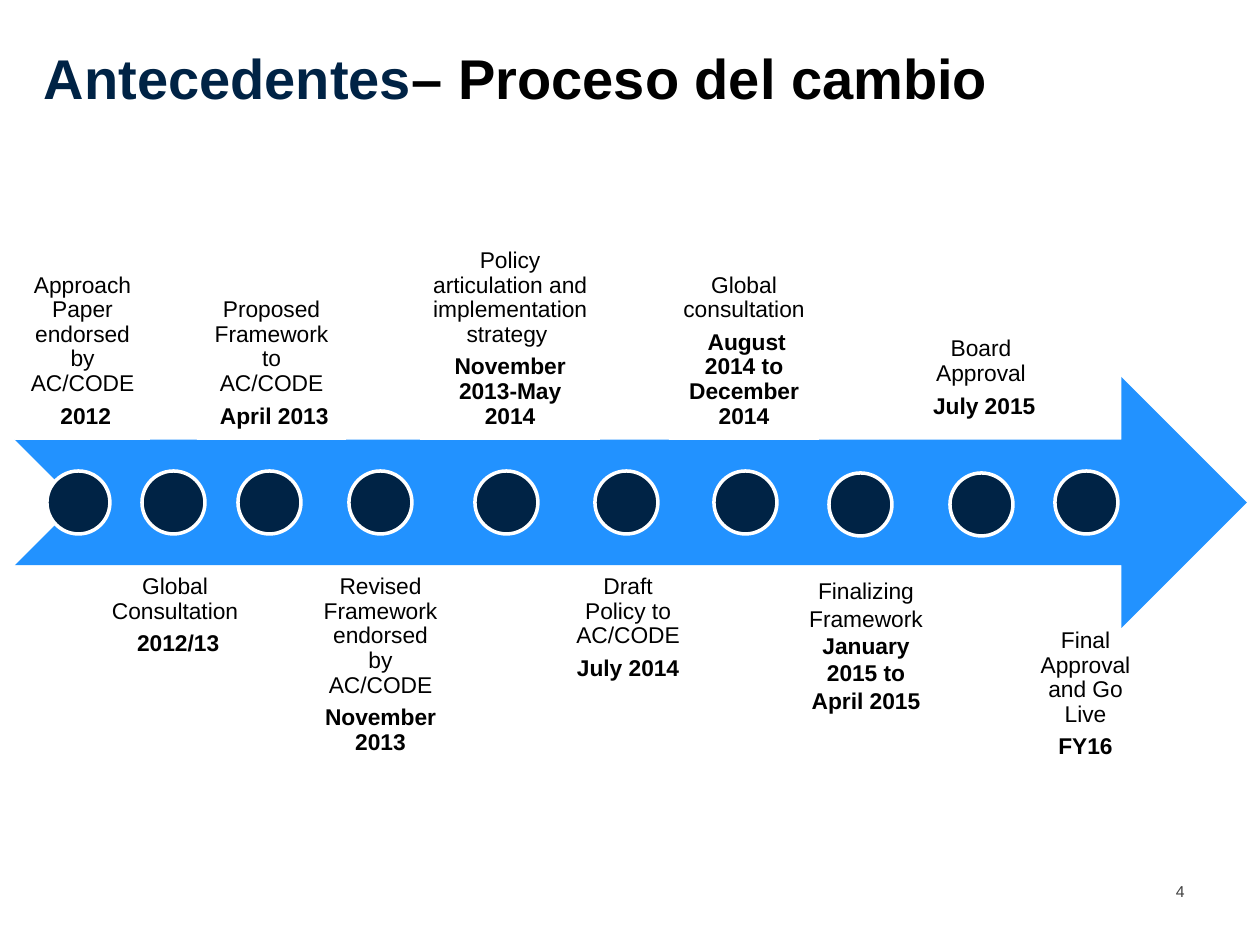
from pptx import Presentation
from pptx.dml.color import RGBColor
from pptx.enum.shapes import MSO_SHAPE as Shape
from pptx.enum.text import MSO_ANCHOR as Anchor, PP_ALIGN as Align
from pptx.util import Emu, Pt

PX_PER_INCH = 126
COLORS = {"navy": "002345", "blue": "2292FF", "white": "FFFFFF",
          "black": "000000", "gray": "404040"}
FONT = "Arial"
DOT_SIZE = 63
BOX_HEIGHT = 251
INSET = 11

# Milestone dots: left, top
DOTS = [(47, 471), (142, 471), (238, 471), (349, 471), (475, 471),
        (595, 471), (714, 471), (829, 473), (950, 473), (1055, 471)]

# Labels: left, top, width, step, date
UPPER_LABELS = [
    (15, 189, 135, "Approach Paper endorsed by AC/CODE", " 2012"),
    (197, 189, 149, "Proposed Framework to AC/CODE", " April 2013"),
    (420, 189, 180, "Policy articulation and implementation strategy ",
     "November 2013-May 2014"),
    (669, 189, 150, "Global consultation", " August 2014 to December 2014"),
    (906, 179, 150, "Board Approval", " July 2015"),
]
LOWER_LABELS = [
    (92, 564, 166, "Global Consultation", " 2012/13"),
    (310, 564, 141, "Revised Framework endorsed by AC/CODE", "November 2013"),
    (563, 564, 130, "Draft Policy to AC/CODE ", "July 2014"),
    (1024, 618, 123, "Final Approval and Go Live", "FY16"),
]


def px(length):
    return Emu(round(length * 914400 / PX_PER_INCH))


def rgb(name):
    return RGBColor.from_string(COLORS[name])


def style(font, size, color, bold=False):
    font.name = FONT
    font.size = Pt(size)
    font.bold = bold
    font.color.rgb = rgb(color)


def add_figure(slide, kind, left, top, width, height, fill, line=None):
    shape = slide.shapes.add_shape(kind, px(left), px(top), px(width), px(height))
    shape.shadow.inherit = False
    shape.fill.solid()
    shape.fill.fore_color.rgb = rgb(fill)
    if line:
        shape.line.color.rgb = rgb(line)
        shape.line.width = Pt(2)
    else:
        shape.line.fill.background()


def add_text_box(slide, left, top, width, height, insets, anchor=Anchor.TOP):
    box = slide.shapes.add_textbox(px(left), px(top), px(width), px(height))
    frame = box.text_frame
    frame.word_wrap = True
    frame.vertical_anchor = anchor
    (frame.margin_left, frame.margin_top,
     frame.margin_right, frame.margin_bottom) = map(px, insets)
    return box


def fill_label(frame, step, date, line_spacing, space_after):
    frame.text = f"{step}\n{date}"
    for paragraph, bold in zip(frame.paragraphs, (False, True)):
        paragraph.alignment = Align.CENTER
        paragraph.line_spacing = line_spacing
        paragraph.space_after = Pt(space_after)
        style(paragraph.runs[0].font, 13, "black", bold)


def add_label(slide, left, top, width, step, date, above):
    box = add_text_box(slide, left, top, width, BOX_HEIGHT, [INSET] * 4,
                       Anchor.BOTTOM if above else Anchor.TOP)
    if above:
        box.fill.solid()
        box.fill.fore_color.rgb = rgb("white")
    fill_label(box.text_frame, step, date, 0.9, 4.5)


def add_title(slide):
    box = add_text_box(slide, 44, 35, 1171, 79, (0, 0, 0, 3), Anchor.BOTTOM)
    paragraph = box.text_frame.paragraphs[0]
    for text, color in (("Antecedentes", "navy"),
                        ("– Proceso del cambio", "black")):
        run = paragraph.add_run()
        run.text = text
        style(run.font, 32, color, bold=True)


def add_page_number(slide):
    box = add_text_box(slide, 1176, 877, 39, 30, (0, 5, 0, 0))
    box.text_frame.text = "4"
    style(box.text_frame.paragraphs[0].runs[0].font, 9, "gray")


def main():
    presentation = Presentation()
    presentation.slide_width = px(1260)
    presentation.slide_height = px(945)
    slide = presentation.slides.add_slide(presentation.slide_layouts[6])

    add_page_number(slide)
    add_title(slide)

    # Timeline arrow with the labels around it
    add_figure(slide, Shape.NOTCHED_RIGHT_ARROW, 15, 377, 1232, BOX_HEIGHT, "blue")
    for label in UPPER_LABELS:
        add_label(slide, *label, above=True)
    for label in LOWER_LABELS:
        add_label(slide, *label, above=False)

    # This label is set with looser lines than the others
    finalizing = add_text_box(slide, 790, 571, 152, 150, (13, 6, 13, 6))
    fill_label(finalizing.text_frame, "Finalizing Framework",
               "January 2015 to April 2015", 1.0, 0)

    # Milestone dots
    for left, top in DOTS:
        add_figure(slide, Shape.OVAL, left, top, DOT_SIZE, DOT_SIZE, "navy", "white")

    presentation.save("out.pptx")


if __name__ == "__main__":
    main()
